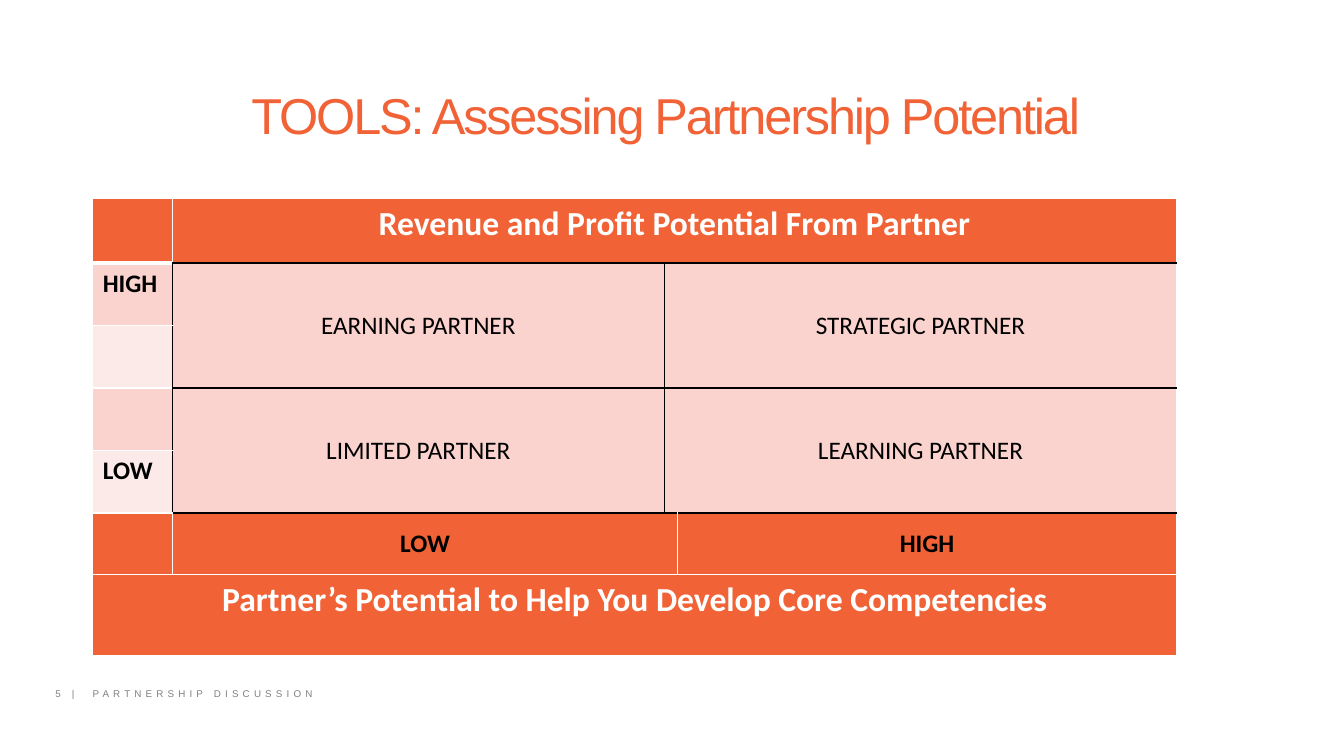
"""Build the partnership potential matrix slide."""
from dataclasses import dataclass

from lxml import etree
from pptx import Presentation
from pptx.dml.color import RGBColor
from pptx.enum.text import MSO_ANCHOR, MSO_AUTO_SIZE, PP_ALIGN
from pptx.oxml.ns import qn
from pptx.util import Inches, Pt

LEFT, CENTER = PP_ALIGN.LEFT, PP_ALIGN.CENTER
TOP, MIDDLE = MSO_ANCHOR.TOP, MSO_ANCHOR.MIDDLE
NO_FIT = MSO_AUTO_SIZE.NONE


@dataclass(frozen=True)
class Theme:
    """Colours, fonts and type sizes."""
    orange: str = "F16336"
    pink: str = "FAD3CE"
    pale: str = "FCEAE8"
    white: str = "FFFFFF"
    black: str = "000000"
    grey: str = "808080"
    heading_font: str = "Arial"
    table_font: str = "Calibri"
    title_size: int = 36
    band_size: int = 24
    cell_size: int = 18
    footer_size: int = 7


THEME = Theme()
TITLE = "TOOLS: Assessing Partnership Potential"
FOOTER = "5 |\tPARTNERSHIP DISCUSSION"
MATRIX_COLUMNS = [0.79, 4.88, 0.13, 4.95]
MATRIX_ROWS = [0.64] + [0.62] * 5
TABLE_LEFT, MATRIX_TOP, BAND_TOP, BAND_HEIGHT = 0.92, 1.97, 5.7, 0.8

WHITE_LINE, THICK_LINE, BLACK_LINE = (THEME.white, 1), (THEME.white, 3), (THEME.black, 1)
WHITE_BOX = dict.fromkeys("LRTB", WHITE_LINE)
BLACK_BOX = dict.fromkeys("LRTB", BLACK_LINE)
LABEL_BOX = WHITE_BOX | {"R": BLACK_LINE}

BAND = {"fill": THEME.orange, "color": THEME.white, "size": THEME.band_size,
        "bold": True, "align": CENTER, "anchor": TOP, "borders": WHITE_BOX}
HEADER = BAND | {"borders": WHITE_BOX | {"B": BLACK_LINE}}
CORNER = BAND | {"borders": WHITE_BOX | {"B": THICK_LINE}}
QUADRANT = {"fill": THEME.pink, "color": THEME.black, "size": THEME.cell_size,
            "bold": False, "align": CENTER, "anchor": MIDDLE, "borders": BLACK_BOX}
LABEL = QUADRANT | {"bold": True, "align": LEFT, "anchor": TOP, "borders": LABEL_BOX}
PALE_LABEL = LABEL | {"fill": THEME.pale}
TOP_LABEL = LABEL | {"borders": LABEL_BOX | {"T": THICK_LINE}}
SCALE = QUADRANT | {"fill": THEME.orange, "bold": True,
                    "borders": WHITE_BOX | {"T": BLACK_LINE}}

MATRIX = [
    (0, 0, 1, 1, "", CORNER),
    (0, 1, 1, 3, "Revenue and Profit Potential From Partner", HEADER),
    (1, 0, 1, 1, "HIGH", TOP_LABEL),
    (2, 0, 1, 1, "", PALE_LABEL),
    (3, 0, 1, 1, "", LABEL),
    (4, 0, 1, 1, "LOW", PALE_LABEL),
    (1, 1, 2, 1, "EARNING PARTNER", QUADRANT),
    (1, 2, 2, 2, "STRATEGIC PARTNER", QUADRANT),
    (3, 1, 2, 1, "LIMITED PARTNER", QUADRANT),
    (3, 2, 2, 2, "LEARNING PARTNER", QUADRANT),
    (5, 0, 1, 1, "", BAND),
    (5, 1, 1, 2, "LOW", SCALE),
    (5, 3, 1, 1, "HIGH", SCALE),
]
BOTTOM_BAND = [(0, 0, 1, 1, "Partner’s Potential to Help You Develop Core Competencies", BAND)]


def set_attributes(target, values):
    for name, value in values.items():
        setattr(target, name, value)


def format_font(font, name, size, color, bold=False):
    set_attributes(font, {"name": name, "size": Pt(size), "bold": bold})
    font.color.rgb = RGBColor.from_string(color)


def add_border(cell, side, color, width):
    properties = cell._tc.get_or_add_tcPr()
    line = etree.SubElement(properties, qn(f"a:ln{side}"), w=str(Pt(width)))
    fill = etree.SubElement(line, qn("a:solidFill"))
    etree.SubElement(fill, qn("a:srgbClr"), val=color)


def fill_block(table, row, column, height, width, text, style):
    last_row, last_column = row + height - 1, column + width - 1
    for r in range(row, last_row + 1):
        for c in range(column, last_column + 1):
            cell = table.cell(r, c)
            outer = {"L": c == column, "R": c == last_column,
                     "T": r == row, "B": r == last_row}
            for side, is_edge in outer.items():
                if is_edge:
                    add_border(cell, side, *style["borders"][side])
            cell.fill.solid()
            cell.fill.fore_color.rgb = RGBColor.from_string(style["fill"])
    cell = table.cell(row, column)
    if height * width > 1:
        cell.merge(table.cell(last_row, last_column))
    cell.vertical_anchor = style["anchor"]
    paragraph = cell.text_frame.paragraphs[0]
    paragraph.text = text
    paragraph.alignment = style["align"]
    for run in paragraph.runs:
        format_font(run.font, THEME.table_font, style["size"], style["color"], style["bold"])


def add_grid(slide, top, columns, rows, blocks):
    frame = slide.shapes.add_table(len(rows), len(columns), Inches(TABLE_LEFT), Inches(top),
                                   Inches(sum(columns)), Inches(sum(rows)))
    table = frame.table
    set_attributes(table, {"first_row": False, "horz_banding": False})
    for column, width in zip(table.columns, columns):
        column.width = Inches(width)
    for row, height in zip(table.rows, rows):
        row.height = Inches(height)
    for block in blocks:
        fill_block(table, *block)


def add_title(slide):
    title = slide.shapes.title
    set_attributes(title, {"left": Inches(1.64), "top": Inches(0.88),
                           "width": Inches(9.93), "height": Inches(0.59)})
    set_attributes(title.text_frame, {"text": TITLE, "word_wrap": True, "auto_size": NO_FIT,
                                      "vertical_anchor": MIDDLE})
    paragraph = title.text_frame.paragraphs[0]
    set_attributes(paragraph, {"alignment": CENTER, "line_spacing": 0.9})
    run = paragraph.runs[0]
    format_font(run.font, THEME.heading_font, THEME.title_size, THEME.orange)
    run._r.get_or_add_rPr().set("spc", "-150")


def add_footer(slide):
    box = slide.shapes.add_textbox(Inches(0.45), Inches(6.75), Inches(9), Inches(0.27))
    set_attributes(box.text_frame, {"word_wrap": True, "vertical_anchor": MIDDLE})
    paragraph = box.text_frame.paragraphs[0]
    tabs = etree.SubElement(paragraph._p.get_or_add_pPr(), qn("a:tabLst"))
    etree.SubElement(tabs, qn("a:tab"), pos=str(Inches(0.37)), algn="l")
    run = paragraph.add_run()
    run.text = FOOTER
    format_font(run.font, THEME.heading_font, THEME.footer_size, THEME.grey)
    run._r.get_or_add_rPr().set("spc", "300")


def main():
    presentation = Presentation()
    set_attributes(presentation, {"slide_width": Inches(13.33), "slide_height": Inches(7.5)})
    slide = presentation.slides.add_slide(presentation.slide_layouts[5])
    add_title(slide)
    add_grid(slide, MATRIX_TOP, MATRIX_COLUMNS, MATRIX_ROWS, MATRIX)
    add_footer(slide)
    add_grid(slide, BAND_TOP, [sum(MATRIX_COLUMNS)], [BAND_HEIGHT], BOTTOM_BAND)
    presentation.save("out.pptx")


if __name__ == "__main__":
    main()
